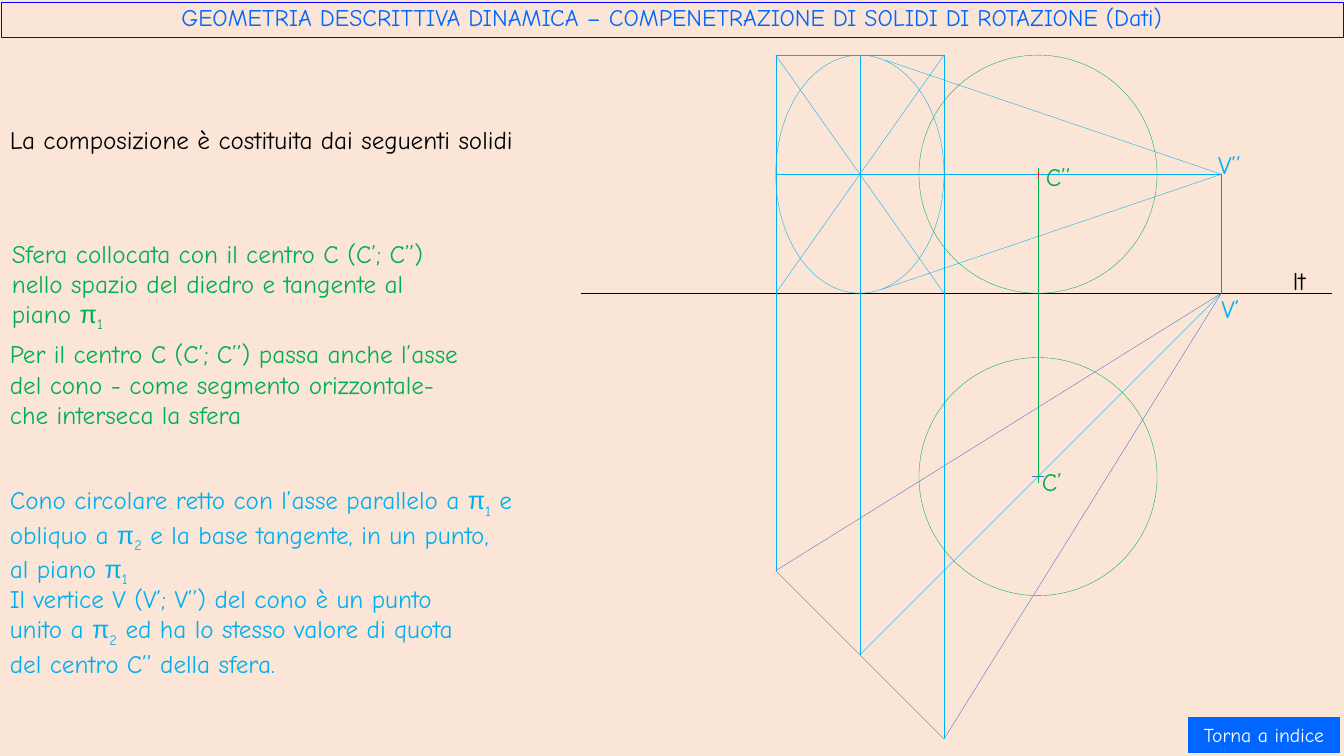
from lxml.etree import SubElement
from pptx import Presentation
from pptx.dml.color import RGBColor
from pptx.enum.shapes import MSO_CONNECTOR, MSO_SHAPE
from pptx.enum.text import MSO_ANCHOR, MSO_AUTO_SIZE, PP_ALIGN
from pptx.oxml.ns import qn
from pptx.util import Cm, Pt

THEME = {
    "font": "Comic Neue", "greek": "Arial", "background": "FBE5D6",
    "black": "000000", "white": "FFFFFF", "red": "FF0000",
    "cone": "00B0F0", "cone_edge": "4472C4", "sphere": "00B050",
    "frame": "0000FF", "accent": "0066FF",
    "title": 17, "body": 18, "button": 14, "hairline": 0.25,
}

TITLE = "GEOMETRIA DESCRITTIVA DINAMICA – COMPENETRAZIONE DI SOLIDI DI ROTAZIONE (Dati)"
BUTTON = "Torna a indice"
NOTES = [
    ("La composizione è costituita dai seguenti solidi", "black", (0, 3, 14.94, 1.02)),
    ("Sfera collocata con il centro C (C’; C’’) nello spazio del diedro e tangente al piano π1",
     "sphere", (0.05, 5.87, 11.84, 2.57)),
    ("Per il centro C (C’; C’’) passa anche l’asse del cono - come segmento orizzontale- "
     "che interseca la sfera", "sphere", (0, 8.41, 12.09, 2.57)),
    ("Cono circolare retto con l’asse parallelo a π1 e obliquo a π2 e la base tangente, "
     "in un punto, al piano π1", "cone", (0, 12.09, 13.23, 2.57)),
    ("Il vertice V (V’; V’’) del cono è un punto unito a π2 ed ha lo stesso valore di quota "
     "del centro C’’ della sfera.", "cone", (0, 14.58, 12.45, 2.57)),
]
LABELS = [
    ("lt", "black", (32.33, 6.55)), ("V’’", "cone", (30.45, 3.63)),
    ("V’", "cone", (30.53, 7.26)), ("C’", "sphere", (26.01, 11.63)),
    ("C’’", "sphere", (26.11, 3.94)),
]
LABEL_SIZE = (1.3, 1.02)

GROUND, RADIUS, HALF_BASE = 7.39, 3, 2.12
GROUND_START, GROUND_END = 14.63, 33.58
BASE_X, CENTRE_X, VERTEX_X = 21.67, 26.16, 30.78
UPPER_TANGENT, LOWER_TANGENT = (22.33, 1.52), (22.23, 7.29)


def colour(name):
    return RGBColor.from_string(THEME[name])


def write(frame, text, size="body", ink="black", align=PP_ALIGN.LEFT,
          anchor=MSO_ANCHOR.TOP, spacing=None, grow=False):
    frame.word_wrap = True
    frame.vertical_anchor = anchor
    if grow:
        frame.auto_size = MSO_AUTO_SIZE.SHAPE_TO_FIT_TEXT
    paragraph = frame.paragraphs[0]
    paragraph.alignment = align
    paragraph.line_spacing = spacing
    opening, *planes = text.split("π")
    pieces = [(opening, "font", False)]
    for plane in planes:
        pieces += [("π", "greek", False), (plane[0], "font", True), (plane[1:], "font", False)]
    for piece, face, lowered in pieces:
        if not piece:
            continue
        run = paragraph.add_run()
        run.text = piece
        run.font.name = THEME[face]
        run.font.size = Pt(THEME[size])
        run.font.color.rgb = colour(ink)
        if lowered:
            run.font._element.set("baseline", "-25000")


def add_text(slide, text, ink, box):
    note = slide.shapes.add_textbox(*map(Cm, box))
    write(note.text_frame, text, ink=ink, grow=True)


def add_line(slide, start, end, ink):
    line = slide.shapes.add_connector(MSO_CONNECTOR.STRAIGHT, *map(Cm, (*start, *end)))
    line.line.color.rgb = colour(ink)
    line.line.width = Pt(THEME["hairline"])
    SubElement(line._element.spPr, qn("a:effectLst"))


def add_outline(slide, kind, box, ink=None, fill=None):
    outline = slide.shapes.add_shape(kind, *map(Cm, box))
    outline.shadow.inherit = False
    if fill:
        outline.fill.solid()
        outline.fill.fore_color.rgb = colour(fill)
    else:
        outline.fill.background()
    if ink:
        outline.line.color.rgb = colour(ink)
        outline.line.width = Pt(THEME["hairline"])
    else:
        outline.line.fill.background()
    return outline


def add_ellipse(slide, centre, half_width, ink):
    x, y = centre
    box = (x - half_width, y - RADIUS, 2 * half_width, 2 * RADIUS)
    add_outline(slide, MSO_SHAPE.OVAL, box, ink)


def draw_projections(slide):
    axis, top = GROUND - RADIUS, GROUND - 2 * RADIUS
    left, right = BASE_X - HALF_BASE, BASE_X + HALF_BASE
    vertex_plan, vertex_front = (VERTEX_X, GROUND), (VERTEX_X, axis)
    centre_plan = (CENTRE_X, GROUND + VERTEX_X - CENTRE_X)
    centre_front = (CENTRE_X, axis)

    add_line(slide, (GROUND_START, GROUND), (GROUND_END, GROUND), "black")
    base_plan = {x: (x, GROUND + VERTEX_X - BASE_X + x - BASE_X) for x in (left, BASE_X, right)}
    for x, point in base_plan.items():
        add_line(slide, point, vertex_plan, "cone" if x == BASE_X else "cone_edge")
        add_line(slide, point, (x, GROUND), "cone")
        add_line(slide, (x, GROUND), (x, top), "cone")
    for start, end in [
        (base_plan[left], base_plan[right]),
        ((left, top), (right, top)),
        ((left, top), (right, GROUND)),
        ((left, GROUND), (right, top)),
        ((left, axis), vertex_front),
        (vertex_front, LOWER_TANGENT),
        (vertex_front, UPPER_TANGENT),
    ]:
        add_line(slide, start, end, "cone")
    add_line(slide, vertex_plan, vertex_front, "cone_edge")
    add_ellipse(slide, (BASE_X, axis), HALF_BASE, "cone")
    for centre in (centre_front, centre_plan):
        add_ellipse(slide, centre, RADIUS, "sphere")

    x, y = centre_plan
    add_line(slide, (x - 0.15, y), (x + 0.15, y), "cone_edge")
    add_line(slide, (x, axis - 0.15), (x, y + 0.15), "sphere")
    add_line(slide, (x, axis - 0.08), (x, axis + 0.08), "red")


def main():
    deck = Presentation()
    deck.slide_width, deck.slide_height = Cm(33.87), Cm(19.05)
    slide = deck.slides.add_slide(deck.slide_layouts[6])
    slide.background.fill.solid()
    slide.background.fill.fore_color.rgb = colour("background")

    draw_projections(slide)
    title = add_outline(slide, MSO_SHAPE.RECTANGLE, (0.03, 0.05, 33.81, 0.89), ink="frame")
    write(title.text_frame, TITLE, size="title", ink="accent", align=PP_ALIGN.CENTER,
          anchor=MSO_ANCHOR.MIDDLE, spacing=0.8)
    for text, ink, box in NOTES:
        add_text(slide, text, ink, box)
    for text, ink, corner in LABELS:
        add_text(slide, text, ink, corner + LABEL_SIZE)
    button = add_outline(slide, MSO_SHAPE.ACTION_BUTTON_CUSTOM, (29.95, 18.08, 3.81, 0.89),
                         fill="accent")
    write(button.text_frame, BUTTON, size="button", ink="white", align=PP_ALIGN.CENTER,
          anchor=MSO_ANCHOR.MIDDLE)
    deck.save("out.pptx")


if __name__ == "__main__":
    main()
